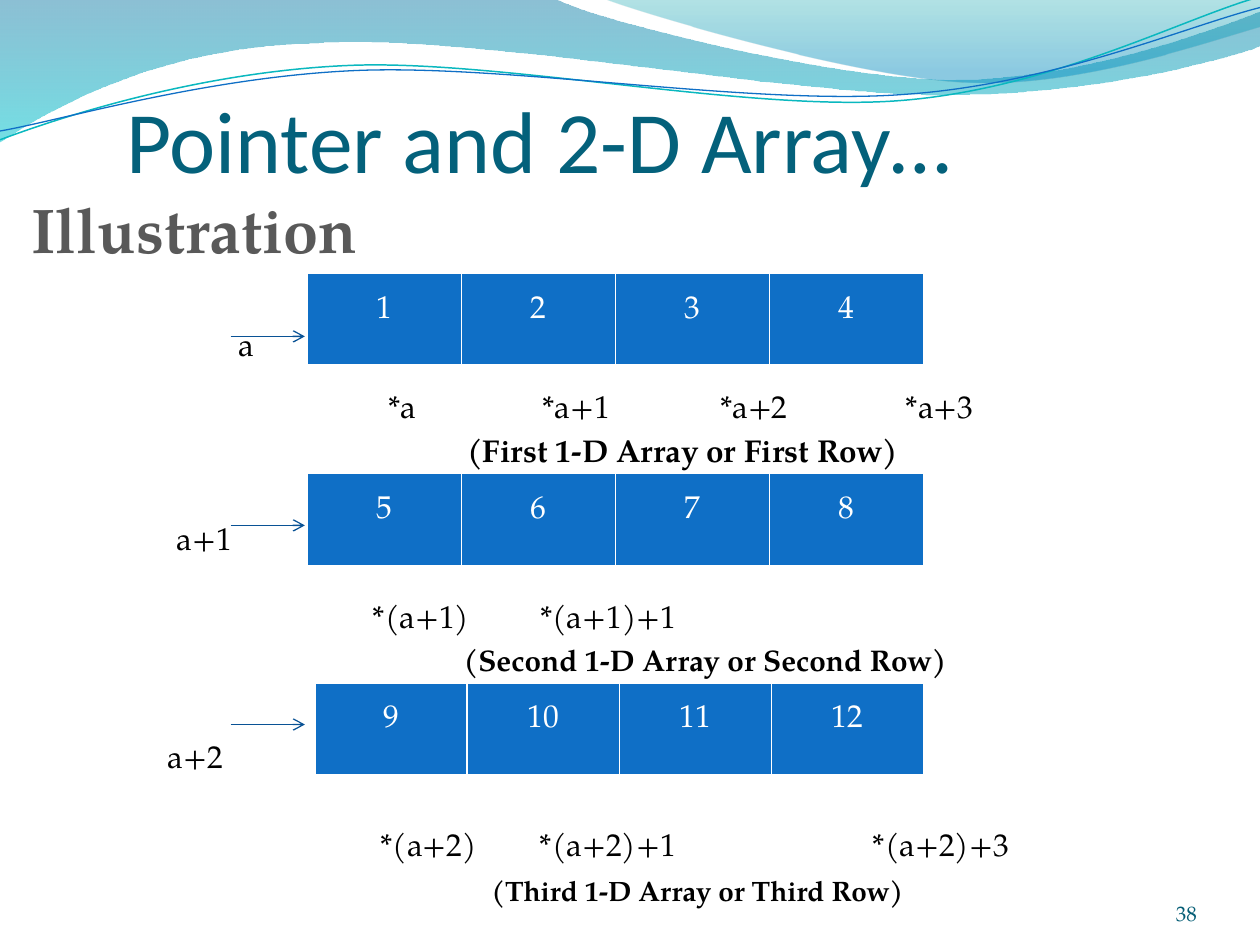
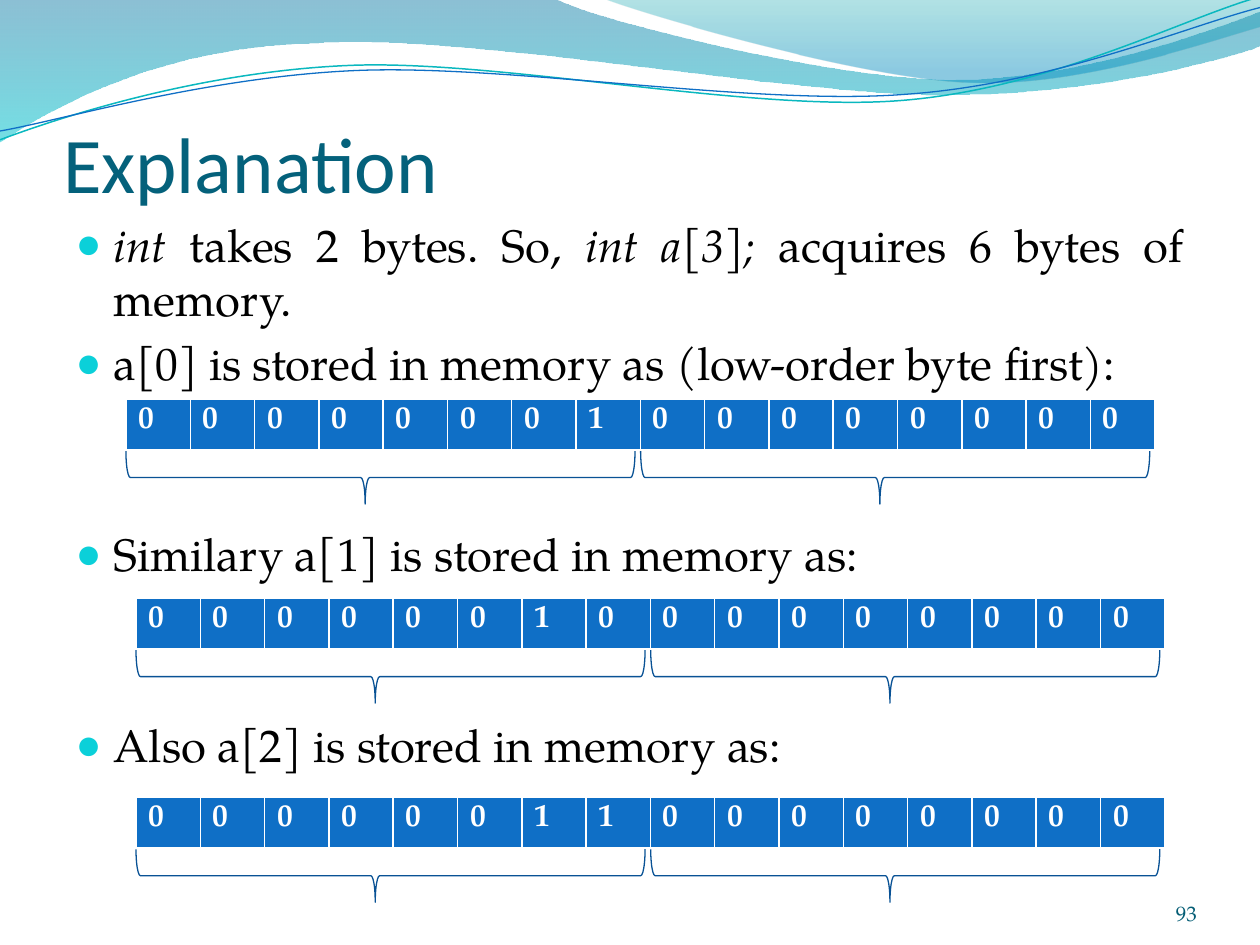
from dataclasses import dataclass

from pptx import Presentation
from pptx.dml.color import RGBColor
from pptx.enum import shapes, text
from pptx.oxml import ns
from pptx.util import Inches, Pt
from lxml import etree


@dataclass(frozen=True)
class Theme:
    heading_font: str = "Calibri"
    body_font: str = "TeX Gyre Pagella"
    title: str = "04617B"
    ink: str = "000000"
    subtitle: str = "595959"
    number: str = "045D75"
    cell: str = "0F6FC6"
    white: str = "FFFFFF"
    line: str = "095295"
    bullet: str = "0BD0D9"
    teal_line: str = "0AB8BF"
    label_size: float = 18
    list_size: float = 26
    subtitle_size: float = 36
    number_size: float = 12


THEME = Theme()
BODY_LAYOUT = 1

# Wave outlines: a start point, then lines (one point) or curves (three points)
LOWER_WAVE = [
    (0, 0), [(4.4, -0.01)],
    [(4.76, 0.17), (6.64, 0.63), (7.58, 0.63)],
    [(8.53, 0.63), (9.58, 0.26), (10, 0.09)],
    [(10.01, 0.36)],
    [(9.83, 0.44), (8.7, 0.76), (7.46, 0.75)],
    [(6.22, 0.75), (3.82, 0.28), (2.57, 0.34)],
    [(1.29, 0.36), (0.46, 0.83), (-0.01, 1.13)],
    [(0, 0)],
]
UPPER_WAVE = [
    (4.79, -0.01),
    [(5.09, 0.11), (6.82, 0.62), (7.69, 0.65)],
    [(8.56, 0.69), (9.61, 0.32), (10, 0.21)],
    [(10, 0)],
    [(4.79, -0.01)],
]
TEAL_CURVE = [
    (0, 1.11),
    [(0.48, 0.93), (1.58, 0.57), (2.77, 0.52)],
    [(3.95, 0.47), (5.93, 0.89), (7.13, 0.8)],
    [(8.33, 0.71), (9.38, 0.15), (9.98, -0.02)],
]
BLUE_CURVE = [
    (0, 1.04),
    [(0.47, 0.96), (1.64, 0.61), (2.83, 0.56)],
    [(4.03, 0.51), (5.97, 0.84), (7.17, 0.75)],
    [(8.36, 0.67), (9.41, 0.21), (10, 0.06)],
]


def rgb(value):
    return RGBColor.from_string(value)


def add_xml(parent, tag, **attributes):
    return etree.SubElement(parent, ns.qn(tag), attributes)


# Text helpers
def add_run(paragraph, words, size, color, font=THEME.body_font, **style):
    run = paragraph.add_run()
    run.text = words
    run.font.name, run.font.size = font, Pt(size)
    run.font.color.rgb = rgb(color)
    for name, value in style.items():
        setattr(run.font, name, value)
    return run


def place(shape, box):
    shape.left, shape.top, shape.width, shape.height = map(Inches, box)


def set_frame(frame, anchor, insets=None):
    frame.word_wrap = True
    frame.auto_size = text.MSO_AUTO_SIZE.NONE
    frame.vertical_anchor = anchor
    if insets:
        (frame.margin_left, frame.margin_top,
         frame.margin_right, frame.margin_bottom) = map(Inches, insets)


def list_paragraphs(frame, count):
    return [frame.paragraphs[0]] + [frame.add_paragraph() for _ in range(count - 1)]


def set_indent(paragraph, left, first_line):
    properties = paragraph._p.get_or_add_pPr()
    properties.set("marL", str(Inches(left)))
    properties.set("indent", str(Inches(first_line)))
    return properties


def add_text(slide, box, words, size, color, align, anchor, insets=None, **style):
    frame = slide.shapes.add_textbox(*map(Inches, box)).text_frame
    set_frame(frame, anchor, insets)
    frame.paragraphs[0].alignment = align
    add_run(frame.paragraphs[0], words, size, color, **style)


# Shared wave band, kept on the slide master
def add_outline(slide, outline, close):
    start, *segments = outline
    points = [(Inches(x), Inches(y)) for segment in segments for x, y in segment]
    builder = slide.shapes.build_freeform(*map(Inches, start))
    builder.add_line_segments(points, close=close)
    shape = builder.convert_to_shape()
    shape.shadow.inherit = False
    # Join each run of three points into one cubic curve
    lines = iter(list(shape.element.spPr.iter(ns.qn("a:lnTo"))))
    for segment in segments:
        parts = [next(lines) for _ in segment]
        if len(parts) == 3:
            curve = etree.Element(ns.qn("a:cubicBezTo"))
            parts[0].addprevious(curve)
            for part in parts:
                curve.append(part[0])
                part.getparent().remove(part)
    return shape


def add_wave(slide, outline, stops):
    shape = add_outline(slide, outline, close=True)
    shape.line.fill.background()
    shape.fill.gradient()
    shape.fill.gradient_angle = 270
    for stop, (position, color, _) in zip(shape.fill.gradient_stops, stops):
        stop.position, stop.color.rgb = position, rgb(color)
    colors = shape.element.spPr.iter(ns.qn("a:srgbClr"))
    for color, (_, _, opacity) in zip(colors, stops):
        add_xml(color, "a:alpha", val=str(opacity * 1000))
    return shape


def add_curve(slide, outline, color, width):
    shape = add_outline(slide, outline, close=False)
    shape.fill.background()
    shape.line.color.rgb, shape.line.width = rgb(color), Pt(width)
    return shape


def add_band_to_master(presentation, slide):
    band = [
        add_wave(slide, LOWER_WAVE, [(0, "0074A1", 45), (1, "00C6CF", 55)]),
        add_wave(slide, UPPER_WAVE, [(0, "00A1A9", 30), (0.8, "008BBF", 45)]),
        add_curve(slide, TEAL_CURVE, THEME.teal_line, 0.85),
        add_curve(slide, BLUE_CURVE, THEME.cell, 0.75),
    ]
    tree = presentation.slide_master.shapes.element
    for index, shape in enumerate(band, start=2):
        tree.insert(index, shape.element)


# Title, body and slide number common to both slides
def start_slide(presentation, title, title_box, title_size, body_box, number):
    slide = presentation.slides.add_slide(presentation.slide_layouts[BODY_LAYOUT])
    place(slide.shapes.title, title_box)
    frame = slide.shapes.title.text_frame
    set_frame(frame, text.MSO_ANCHOR.BOTTOM, (0, 0.05, 0, 0))
    frame.paragraphs[0].alignment = text.PP_ALIGN.LEFT
    add_run(frame.paragraphs[0], title, title_size, THEME.title, THEME.heading_font)
    body = slide.placeholders[1]
    place(body, body_box)
    set_frame(body.text_frame, text.MSO_ANCHOR.TOP)
    add_text(slide, (8.67, 6.95, 0.83, 0.4), number, THEME.number_size, THEME.number,
             text.PP_ALIGN.RIGHT, text.MSO_ANCHOR.BOTTOM, (0, 0, 0, 0))
    return slide, body.text_frame


# One-row table of array cells
def add_cells(slide, box, values, align, spacing=None, bold=False):
    table = slide.shapes.add_table(1, len(values), *map(Inches, box)).table
    table.first_row = table.horz_banding = False
    for column, cell, value in zip(table.columns, table.rows[0].cells, values):
        column.width = Inches(box[2] / len(values))
        properties = cell._tc.get_or_add_tcPr()
        for side, width in (("L", 1), ("R", 1), ("T", 1), ("B", 3)):
            line = add_xml(properties, f"a:ln{side}", w=str(Pt(width)))
            add_xml(add_xml(line, "a:solidFill"), "a:srgbClr", val=THEME.white)
        cell.fill.solid()
        cell.fill.fore_color.rgb = rgb(THEME.cell)
        paragraph = cell.text_frame.paragraphs[0]
        paragraph.alignment = align
        if spacing:
            paragraph.line_spacing = spacing
        add_run(paragraph, str(value), THEME.label_size, THEME.white, bold=bold)


def add_arrow(slide, left, top, length):
    arrow = slide.shapes.add_connector(
        shapes.MSO_CONNECTOR.STRAIGHT,
        Inches(left), Inches(top), Inches(left + length), Inches(top))
    arrow.line.color.rgb, arrow.line.width = rgb(THEME.line), Pt(0.75)
    add_xml(arrow.line._get_or_add_ln(), "a:tailEnd", type="arrow")
    add_xml(arrow.element.spPr, "a:effectLst")


# Label rows: exact line height, size, bold, indent, first label, then (gap, label).
# A gap is one space widened by character spacing, in points.
def add_label_rows(frame, rows):
    for paragraph, (pitch, size, bold, indent, first, *others) in zip(
            list_paragraphs(frame, len(rows)), rows):
        paragraph.line_spacing = Pt(pitch)
        paragraph.space_before = Pt(0)
        add_xml(set_indent(paragraph, indent, 0), "a:buNone")
        add_run(paragraph, first, size, THEME.ink, bold=bold)
        for gap, label in others:
            space = add_run(paragraph, " ", size, THEME.ink)
            space._r.get_or_add_rPr().set("spc", str(int((gap - size / 4) * 100)))
            add_run(paragraph, label, size, THEME.ink, bold=bold)


def build_pointer_slide(presentation):
    slide, body = start_slide(presentation, "Pointer and 2-D Array…",
                              (1, 0.5, 6.75, 1.02), 50, (0.5, 1.83, 9, 5.13), "38")
    size = THEME.label_size
    add_label_rows(body, [
        (72, size, False, 1.29, "a"),
        (35.4, size, False, 2.48, "*a", (72, "*a+1"), (63, "*a+2"), (67.5, "*a+3")),
        (25.2, size, True, 3.11, "(First 1-D Array or First Row)"),
        (50.3, size, False, 0.8, "a+1"),
        (44.6, size, False, 2.36, "*(a+1)", (40.5, "*(a+1)+1")),
        (24.4, 17, True, 3.08, "(Second 1-D Array or Second Row)"),
        (55.6, size, False, 0.73, "a+2"),
        (50.3, size, False, 2.42, "*(a+2)", (36, "*(a+2)+1"), (112.5, "*(a+2)+3")),
        (25, 16, True, 3.3, "(Third 1-D Array or Third Row)"),
    ])
    # Array rows, each with its pointer arrow
    array_rows = [(2.44, 2.17, 2.67), (2.44, 3.76, 4.17), (2.5, 5.42, 5.75)]
    for index, (left, top, arrow_top) in enumerate(array_rows):
        values = range(4 * index + 1, 4 * index + 5)
        add_cells(slide, (left, top, 7.33 - left, 0.74), values,
                  text.PP_ALIGN.CENTER, spacing=1.5)
        add_arrow(slide, 1.83, arrow_top, 0.59)
    add_text(slide, (0, 1.46, 3.08, 0.71), "Illustration", THEME.subtitle_size,
             THEME.subtitle, text.PP_ALIGN.CENTER, text.MSO_ANCHOR.TOP, bold=True)
    return slide


# Bulleted list; each item is (space before, [(words, italic), ...])
def add_bullets(frame, items):
    for paragraph, (space, runs) in zip(list_paragraphs(frame, len(items)), items):
        paragraph.alignment = text.PP_ALIGN.JUSTIFY
        paragraph.space_before = Pt(space)
        properties = set_indent(paragraph, 0.3, -0.3)
        add_xml(add_xml(properties, "a:buClr"), "a:srgbClr", val=THEME.bullet)
        add_xml(properties, "a:buSzPct", val="95000")
        add_xml(properties, "a:buChar", char="●")
        for words, italic in runs:
            add_run(paragraph, words, THEME.list_size, THEME.ink, italic=italic)


# Sixteen bits with a brace under each byte
def add_bit_row(slide, left, top, bits):
    width, brace_width, brace_length = 8.17, 0.42, 4.04
    add_cells(slide, (left, top, width, 0.41), bits, text.PP_ALIGN.LEFT, bold=True)
    for byte in range(2):
        center_x, center_y = left + 2.02 + byte * width / 2, top + 0.62
        box = (center_x - brace_width / 2, center_y - brace_length / 2,
               brace_width, brace_length)
        brace = slide.shapes.add_shape(shapes.MSO_SHAPE.LEFT_BRACE, *map(Inches, box))
        brace.rotation = 270
        brace.adjustments[0], brace.adjustments[1] = 0.083, 0.47
        brace.shadow.inherit = False
        brace.fill.background()
        brace.line.color.rgb, brace.line.width = rgb(THEME.line), Pt(0.75)


def build_explanation_slide(presentation):
    slide, body = start_slide(presentation, "Explanation",
                              (0.5, 0.83, 9, 0.83), 45, (0.5, 1.67, 9, 5.25), "93")
    add_bullets(body, [
        (4.7, [("int", True), (" takes 2 bytes. So, ", False), ("int a[3];", True),
               (" acquires 6 bytes of memory.", False)]),
        (5.2, [("a[0] is stored in memory as (low-order byte first):", False)]),
        (78, [("Similary a[1] is stored in memory as:", False)]),
        (78, [("Also a[2] is stored in memory as:", False)]),
    ])
    for value, left in enumerate((1, 1.08, 1.08), start=1):
        add_bit_row(slide, left, 1.59 + 1.58 * value, f"{value:08b}" + "0" * 8)


def main():
    presentation = Presentation()
    presentation.slide_width, presentation.slide_height = Inches(10), Inches(7.5)
    pointer_slide = build_pointer_slide(presentation)
    add_band_to_master(presentation, pointer_slide)
    build_explanation_slide(presentation)
    presentation.save("out.pptx")


if __name__ == "__main__":
    main()
